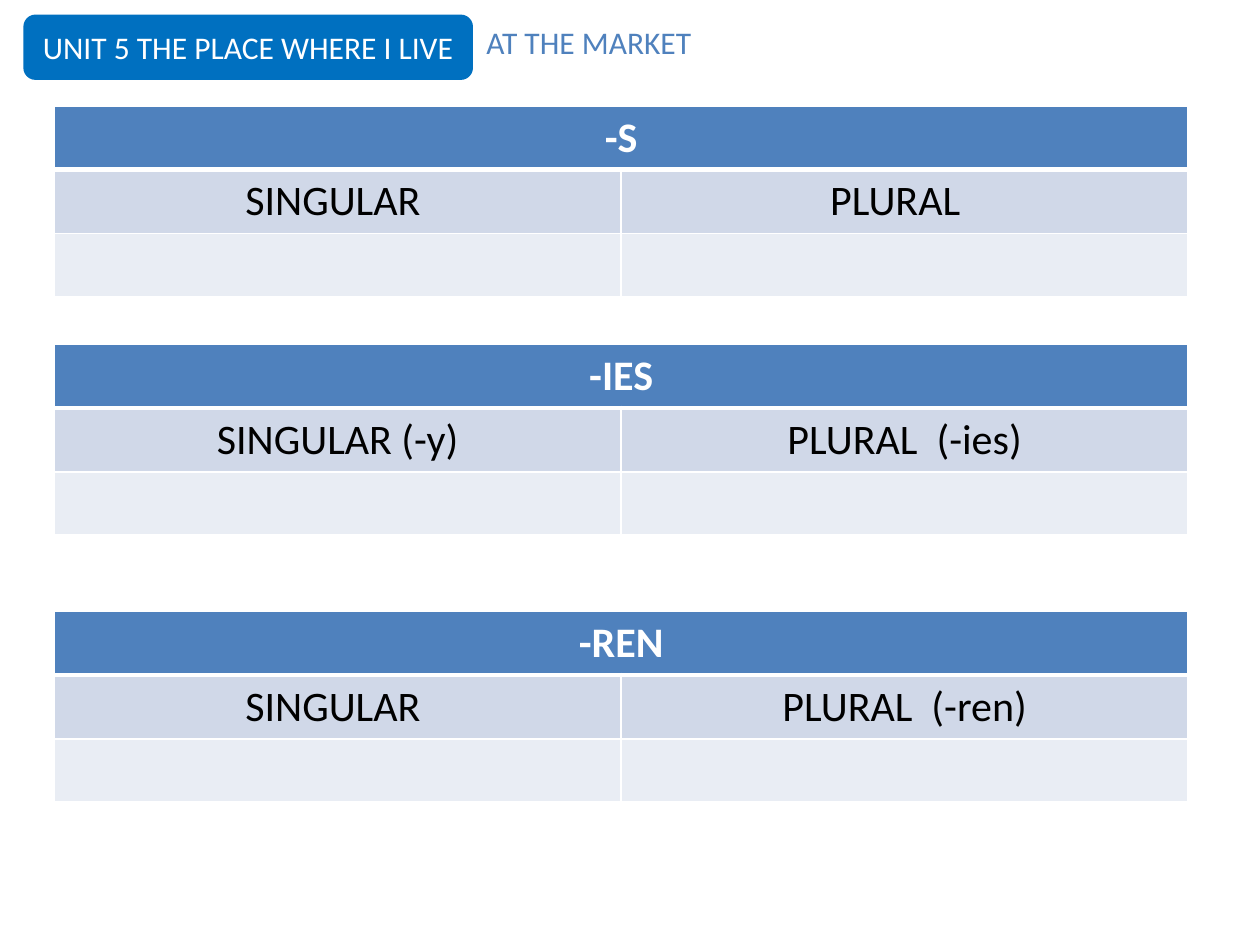
from lxml import etree
from pptx import Presentation, util as u
from pptx.dml.color import RGBColor
from pptx.enum import shapes, text
from pptx.oxml.ns import qn

# Content
UNIT = "UNIT 5 THE PLACE WHERE I LIVE"
TOPIC = "AT THE MARKET"
TABLES = [  # top, ending, column headings
    (0.84, "-S", ("SINGULAR ", "PLURAL  ")),
    (2.73, "-IES", ("SINGULAR (-y)", "PLURAL  (-ies)")),
    (4.85, "-REN", ("SINGULAR ", "PLURAL  (-ren)")),
]

# Layout and colours
LEFT, COLUMN, ROW = 0.43, 4.5, 0.5
HEADER_TOP, HEADER_HEIGHT = 0.13, 0.49
WHITE, BLACK, BLUE, BADGE = "FFFFFF", "000000", "4F81BD", "0070C0"
ROW_FILLS = (BLUE, "D0D8E8", "E9EDF4")
EDGES = (1, 1, 3, 1)  # top edge of each row in points; the last one is missing below
EDGES = (1, 3, 1, 1)


def color(value):
    return RGBColor.from_string(value)


def write(frame, content, size=18, fill=BLACK, bold=False,
          align=text.PP_ALIGN.CENTER):
    paragraph = frame.paragraphs[0]
    paragraph.alignment = align
    run = paragraph.add_run()
    run.text = content
    run.font.name = "Calibri"
    run.font.size = u.Pt(size)
    run.font.bold = bold
    run.font.color.rgb = color(fill)


def format_cell(cell, row):
    properties = cell._tc.get_or_add_tcPr()
    widths = {"lnL": 1, "lnR": 1, "lnT": EDGES[row], "lnB": EDGES[row + 1]}
    for tag, width in widths.items():
        line = etree.SubElement(properties, qn(f"a:{tag}"), w=str(u.Pt(width)))
        solid = etree.SubElement(line, qn("a:solidFill"))
        etree.SubElement(solid, qn("a:srgbClr"), val=WHITE)
    cell.fill.solid()
    cell.fill.fore_color.rgb = color(ROW_FILLS[row])


def add_ending_table(slide, top, ending, headings):
    rows, columns = len(ROW_FILLS), len(headings)
    table = slide.shapes.add_table(
        rows, columns, u.Inches(LEFT), u.Inches(top),
        u.Inches(columns * COLUMN), u.Inches(rows * ROW)).table
    for row in range(rows):
        for column in range(columns):
            format_cell(table.cell(row, column), row)
    table.cell(0, 0).merge(table.cell(0, columns - 1))
    write(table.cell(0, 0).text_frame, ending, size=24, fill=WHITE, bold=True)
    for column, heading in enumerate(headings):
        write(table.cell(1, column).text_frame, heading, size=24)


def main():
    presentation = Presentation()
    presentation.slide_width, presentation.slide_height = u.Inches(10), u.Inches(7.5)
    slide = presentation.slides.add_slide(presentation.slide_layouts[5])

    # Plural tables
    for top, ending, headings in TABLES:
        add_ending_table(slide, top, ending, headings)

    # Topic title
    title = slide.shapes.title
    title.left, title.top = u.Inches(3.76), u.Inches(HEADER_TOP)
    title.width, title.height = u.Inches(1.85), u.Inches(HEADER_HEIGHT)
    frame = title.text_frame
    frame.auto_size = text.MSO_AUTO_SIZE.NONE
    frame.word_wrap = False
    frame.vertical_anchor = text.MSO_ANCHOR.TOP
    write(frame, TOPIC, fill=BLUE, align=text.PP_ALIGN.LEFT)

    # Unit badge
    badge = slide.shapes.add_shape(
        shapes.MSO_SHAPE.ROUNDED_RECTANGLE, u.Inches(0.2), u.Inches(HEADER_TOP),
        u.Inches(3.54), u.Inches(HEADER_HEIGHT))
    badge.shadow.inherit = False
    badge.fill.solid()
    badge.fill.fore_color.rgb = color(BADGE)
    badge.line.color.rgb = color(BADGE)
    badge.line.width = u.Pt(2)
    badge.text_frame.word_wrap = True
    badge.text_frame.vertical_anchor = text.MSO_ANCHOR.MIDDLE
    write(badge.text_frame, UNIT, fill=WHITE)

    presentation.save("out.pptx")


if __name__ == "__main__":
    main()
